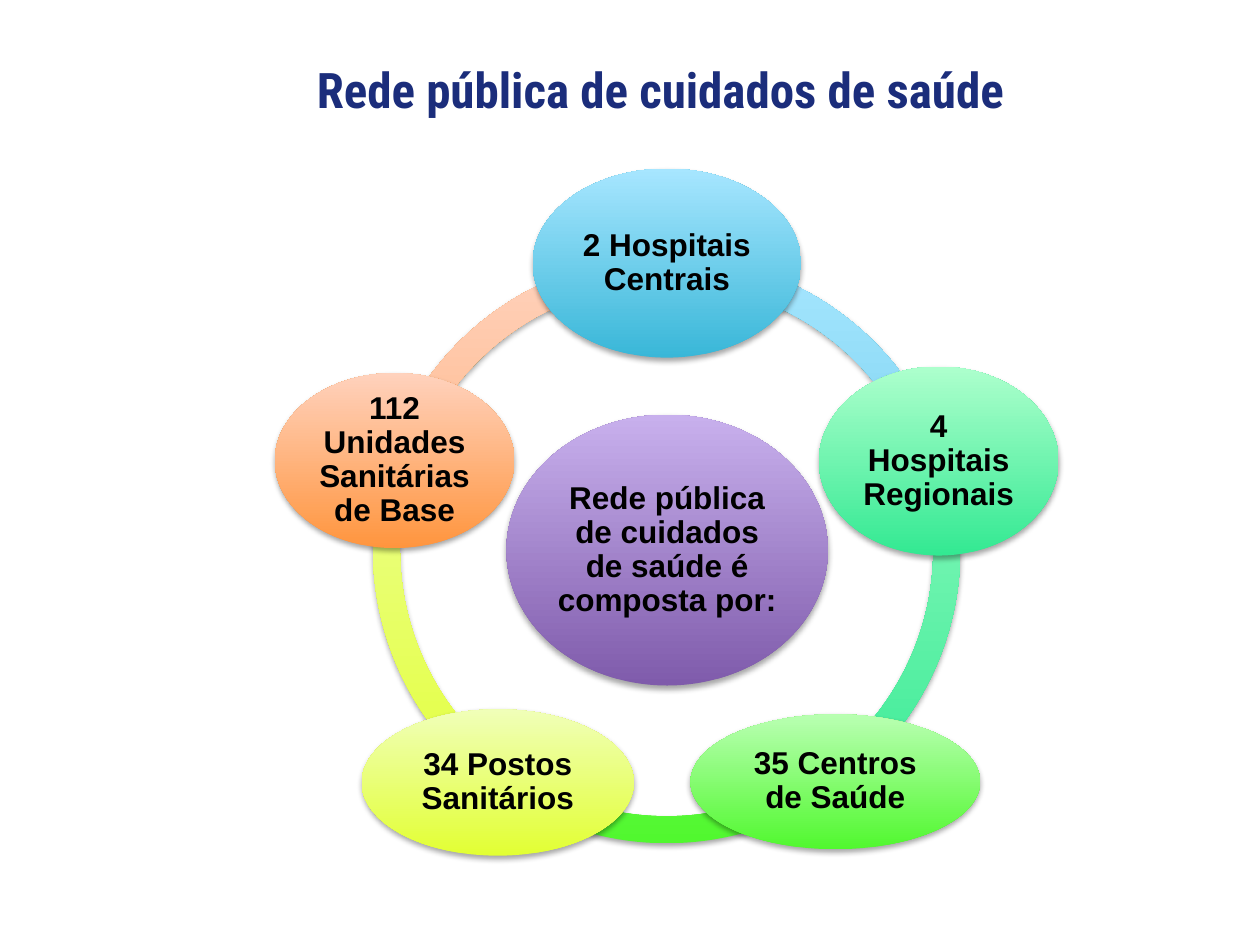
from lxml import etree
from pptx import Presentation
from pptx.dml.color import RGBColor
from pptx.enum import shapes, text
from pptx.oxml import ns
from pptx.util import Cm, Pt

INK = {"title": "1B2D7B", "text": "000000", "shadow": "000000"}
# Dark bottom and light top of each gradient
TONES = {
    "purple": ("7F5BAB", "C8B0ED"),
    "blue": ("39B7D8", "A7E6FF"),
    "teal": ("33E992", "ADFFCD"),
    "green": ("51F82F", "B9FFB2"),
    "yellow": ("E2FF33", "F0FFB8"),
    "orange": ("FF953E", "FFD2BD"),
}
# Ring nodes clockwise from the top: tone, left, top, width, height, label
NODES = [
    ("blue", 10.74, 3.4, 5.41, 3.81, "2 Hospitais Centrais"),
    ("teal", 16.51, 7.39, 4.83, 3.81, "4 Hospitais Regionais"),
    ("green", 13.92, 14.4, 5.84, 2.72, "35 Centros de Saúde"),
    ("yellow", 7.29, 14.3, 5.49, 2.95, "34 Postos Sanitários"),
    ("orange", 5.54, 7.52, 4.83, 3.53, "112 Unidades Sanitárias de Base"),
]
HUB = ("purple", 10.21, 8.36, 6.48, 5.46,
       "Rede pública de cuidados de saúde é composta por:")


def add_part(kind, tone, left, top, width, height):
    """Add a borderless shape with a gradient and a soft shadow."""
    part = slide.shapes.add_shape(kind, Cm(left), Cm(top), Cm(width), Cm(height))
    part.fill.gradient()
    part.fill.gradient_angle = 90
    for stop, shade in zip(part.fill.gradient_stops, TONES[tone]):
        stop.color.rgb = RGBColor.from_string(shade)
    part.line.fill.background()
    part.shadow.inherit = False
    effects = part._element.spPr.find(ns.qn("a:effectLst"))
    shadow = etree.SubElement(effects, ns.qn("a:outerShdw"), blurRad="40000",
                              dist="23000", dir="5400000", rotWithShape="0")
    color = etree.SubElement(shadow, ns.qn("a:srgbClr"), val=INK["shadow"])
    etree.SubElement(color, ns.qn("a:alpha"), val="35000")
    return part


def set_text(frame, words, font, size, color):
    """Write one bold, centred paragraph."""
    frame.text = words
    frame.word_wrap = True
    frame.vertical_anchor = text.MSO_ANCHOR.MIDDLE
    line = frame.paragraphs[0]
    line.alignment = text.PP_ALIGN.CENTER
    style = line.runs[0].font
    style.name, style.size, style.bold = font, Pt(size), True
    style.color.rgb = RGBColor.from_string(color)


deck = Presentation()
deck.slide_width, deck.slide_height = Cm(25.4), Cm(19.05)
slide = deck.slides.add_slide(deck.slide_layouts[5])

# Title
title = slide.shapes.title
title.left, title.top, title.width, title.height = Cm(1.88), Cm(0.64), Cm(22.86), Cm(2.29)
set_text(title.text_frame, "Rede pública de cuidados de saúde",
         "Roboto Condensed", 28, INK["title"])

# Ring: one arc from each node to the next, the first one on top
step = 360 / len(NODES)
for i, node in reversed(list(enumerate(NODES))):
    arc = add_part(shapes.MSO_SHAPE.BLOCK_ARC, node[0], 7.52, 5.16, 11.84, 11.84)
    start = 270 + step * i
    # Angles are stored in 60000ths of a degree, adjustments in 100000ths
    arc.adjustments[0] = start % 360 * 0.6
    arc.adjustments[1] = (start + step) % 360 * 0.6
    arc.adjustments[2] = 0.046

# Hub and nodes
for tone, left, top, width, height, label in [HUB] + NODES:
    oval = add_part(shapes.MSO_SHAPE.OVAL, tone, left, top, width, height)
    frame = oval.text_frame
    frame.margin_left = frame.margin_right = Cm(0.08)
    frame.margin_top = frame.margin_bottom = Cm(0.08)
    set_text(frame, label, "Arial", 18, INK["text"])
    frame.paragraphs[0].line_spacing = 0.9

deck.save("out.pptx")
